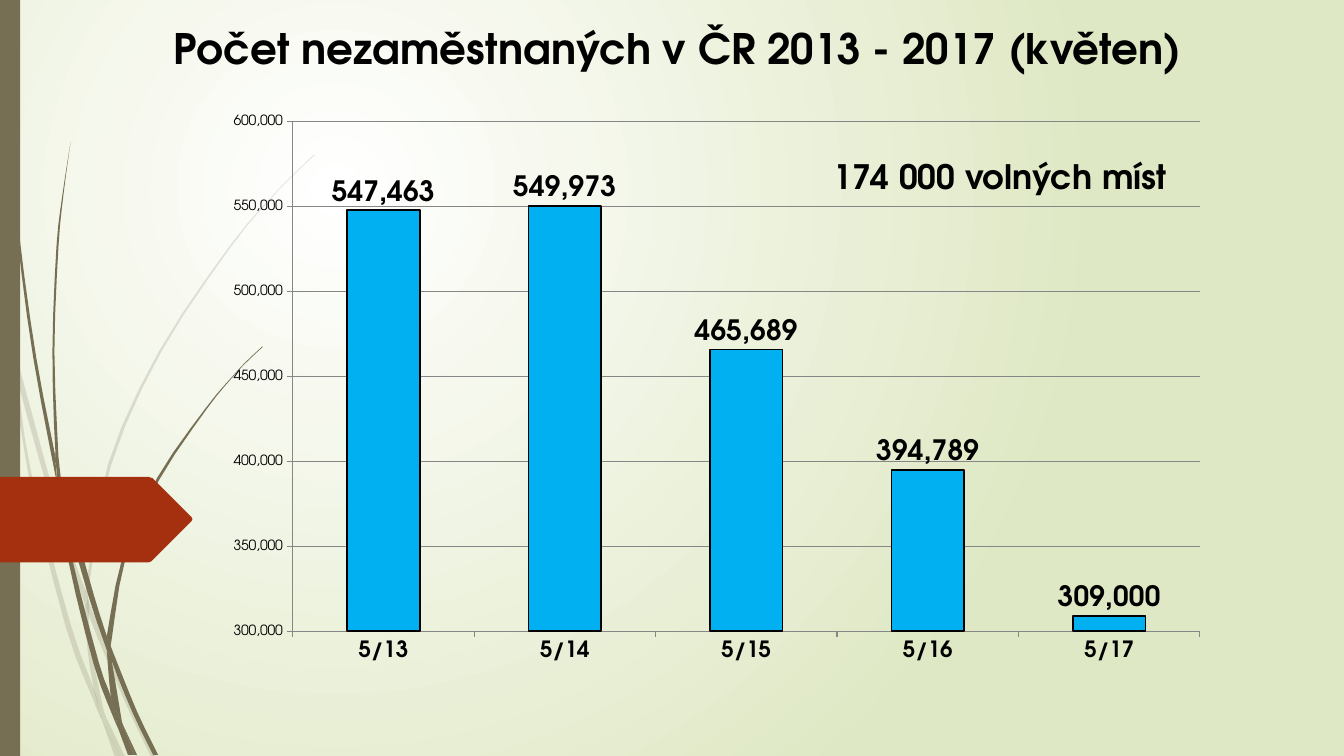
from lxml import etree
from pptx import Presentation
from pptx.chart.data import CategoryChartData
from pptx.dml.color import RGBColor
from pptx.enum.chart import XL_CHART_TYPE, XL_LABEL_POSITION, XL_TICK_MARK
from pptx.enum.shapes import MSO_SHAPE
from pptx.oxml.ns import qn
from pptx.util import Cm, Pt

FONT = "TeX Gyre Adventor"
COLORS = {"text": "000000", "bar": "00B0F0", "grid": "868686", "stem": "766F54",
          "arrow": "A53010", "glow": "FFFFFF", "meadow": "DFE8C4"}

TITLE = "Počet nezaměstnaných v ČR 2013 - 2017 (květen)"
VACANCIES = "174 000 volných míst"
UNEMPLOYED = {"5/13": 547463, "5/14": 549973, "5/15": 465689, "5/16": 394789, "5/17": 309000}
PLOT_AREA = {"x": 0.079, "y": 0.03, "w": 0.901, "h": 0.894}

# Outlines are in steps of 0.0254 cm; each piece of grass has one edge and then the edge back
OUTLINE_STEP = 0.0254
PALE_GRASS = [
    ([(11, 350), (9, 322), (0, 282)], [(0, 299), (10, 344), (11, 350)]),
    ([(14, 345), (17, 376), (58, 522), (84, 599)], [(85, 586), (62, 520), (14, 345)]),
    ([(88, 596), (88, 610), (123, 694), (150, 751)],
     [(155, 751), (127, 692), (92, 607), (88, 596)]),
    ([(105, 711), (119, 751)], [(124, 751), (105, 711)]),
    ([(11, 350), (28, 470), (65, 621), (92, 693), (101, 714)],
     [(99, 707), (93, 683), (70, 619), (31, 469), (17, 376), (11, 350)]),
    ([(84, 599), (87, 646), (93, 683), (96, 692), (105, 711)],
     [(103, 706), (91, 646), (88, 610), (88, 608), (84, 599)]),
    ([(312, 153), (289, 175), (268, 197), (228, 244), (158, 348), (107, 461), (85, 584),
      (85, 586)],
     [(88, 596), (88, 584), (110, 462), (160, 349), (229, 245), (268, 198), (290, 175),
      (312, 154)]),
    ([(101, 714), (114, 751)], [(119, 751), (101, 714)]),
    ([(85, 586), (84, 599)], [(88, 608), (88, 610), (88, 596), (85, 586)]),
    ([(93, 683), (99, 707), (101, 714), (119, 751)], [(105, 711), (96, 692), (93, 683)]),
]
DARK_GRASS = [
    ([(3, 0), (4, 48), (7, 110), (17, 233), (33, 355), (56, 477), (57, 481)],
     [(55, 457), (55, 453), (36, 355), (19, 232), (8, 109), (5, 48), (4, 0)]),
    ([(60, 472), (64, 505), (88, 592), (106, 645)],
     [(106, 633), (106, 631), (93, 590), (60, 472)]),
    ([(110, 641), (111, 656), (132, 708), (152, 749)],
     [(157, 749), (136, 706), (113, 649), (110, 641)]),
    ([(57, 477), (68, 557), (93, 659), (111, 708), (117, 722)],
     [(116, 717), (110, 691), (98, 657), (72, 556), (64, 505), (57, 477)]),
    ([(70, 141), (62, 193), (56, 245), (52, 349), (55, 449), (60, 472)],
     [(58, 453), (54, 349), (58, 245), (63, 193), (70, 141)]),
    ([(122, 719), (133, 749)], [(136, 749), (122, 719)]),
    ([(55, 449), (55, 453), (57, 477)], [(64, 505), (60, 472), (55, 449)]),
    ([(261, 344), (245, 359), (231, 374), (205, 406), (158, 476), (125, 552), (111, 633),
      (110, 641)],
     [(106, 631), (122, 551), (156, 474), (204, 405), (231, 373), (245, 358), (260, 344)]),
    ([(117, 722), (127, 749)], [(131, 749), (117, 722)]),
    ([(106, 645), (110, 691), (116, 706), (122, 719)],
     [(121, 716), (111, 656), (109, 651), (106, 645)]),
    ([(106, 631), (106, 645)], [(109, 651), (111, 656), (110, 641), (106, 631)]),
    ([(110, 691), (116, 717), (117, 722), (130, 749)],
     [(133, 749), (122, 719), (116, 706), (110, 691)]),
]
ARROW = [(0, 473), (147, 473), (150, 474), (151, 474), (190, 513), (191, 515), (190, 517),
         (151, 556), (150, 557), (147, 558), (0, 558)]


def rgb(name):
    return RGBColor.from_string(COLORS[name])


def style_font(font, size, bold=False):
    font.name, font.size, font.bold = FONT, Pt(size), bold
    font.color.rgb = rgb("text")


def paint(shape, color, alpha=None):
    shape.shadow.inherit = False
    shape.fill.solid()
    shape.fill.fore_color.rgb = rgb(color)
    shape.line.fill.background()
    if alpha:
        swatch = shape.element.spPr.find(f"{qn('a:solidFill')}/{qn('a:srgbClr')}")
        etree.SubElement(swatch, qn("a:alpha"), val=str(alpha * 1000))


def smooth(points, steps=3):
    """Catmull-Rom curve through the points, as a list of points."""
    if len(points) == 2:
        return points
    padded = [points[0], *points, points[-1]]
    curve = []
    for a, b, c, d in zip(padded, padded[1:], padded[2:], padded[3:]):
        for step in range(steps):
            t = step / steps
            curve.append(tuple(
                q + t * (r - p) / 2 + t**2 * (2 * p - 5 * q + 4 * r - s) / 2
                + t**3 * (3 * q - p - 3 * r + s) / 2
                for p, q, r, s in zip(a, b, c, d)))
    return curve + [points[-1]]


def add_outline(shapes, points, color, alpha=None):
    corners = [(Cm(x * OUTLINE_STEP), Cm(y * OUTLINE_STEP)) for x, y in points]
    builder = shapes.build_freeform(*corners[0])
    builder.add_line_segments(corners[1:], close=True)
    paint(builder.convert_to_shape(), color, alpha)


def add_text(shapes, text, size, box, wrap):
    frame = shapes.add_textbox(*map(Cm, box)).text_frame
    frame.word_wrap = wrap
    frame.text = text
    style_font(frame.paragraphs[0].runs[0].font, size, bold=True)


def set_background(slide):
    fill = slide.background.fill
    fill.gradient()
    for stop, position, color in zip(fill.gradient_stops, (0, 1), ("glow", "meadow")):
        stop.position = position
        stop.color.rgb = rgb(color)
    gradient = slide.element.find(f".//{qn('a:gradFill')}")
    circle = etree.Element(qn("a:path"), {"path": "circle"})
    etree.SubElement(circle, qn("a:fillToRect"), l="50000", t="50000", r="100000", b="100000")
    gradient.replace(gradient.find(qn("a:lin")), circle)


def fix_plot_area(chart):
    plot_area = chart._chartSpace.find(f".//{qn('c:plotArea')}")
    for old in plot_area.findall(qn("c:layout")):
        plot_area.remove(old)
    layout = etree.Element(qn("c:layout"))
    manual = etree.SubElement(layout, qn("c:manualLayout"))
    settings = {"layoutTarget": "inner", "xMode": "edge", "yMode": "edge", **PLOT_AREA}
    for tag, value in settings.items():
        etree.SubElement(manual, qn(f"c:{tag}"), val=str(value))
    plot_area.insert(0, layout)


def add_unemployment_chart(shapes):
    data = CategoryChartData(number_format="#,##0")
    data.categories = list(UNEMPLOYED)
    data.add_series("Series 1", list(UNEMPLOYED.values()))
    chart = shapes.add_chart(XL_CHART_TYPE.COLUMN_CLUSTERED, Cm(5.37), Cm(2.62),
                             Cm(25.38), Cm(14.38), data).chart
    chart.has_legend = chart.has_title = False
    style_font(chart.font, 10)
    fix_plot_area(chart)

    months, people = chart.category_axis, chart.value_axis
    people.minimum_scale, people.maximum_scale, people.major_unit = 300000, 600000, 50000
    people.has_major_gridlines = True
    people.tick_labels.number_format = "#,##0"
    people.tick_labels.number_format_is_linked = False
    for axis, size, bold in ((months, 16, True), (people, 10, False)):
        axis.major_tick_mark = XL_TICK_MARK.OUTSIDE
        style_font(axis.tick_labels.font, size, bold)
    for line in (months.format.line, people.format.line, people.major_gridlines.format.line):
        line.color.rgb = rgb("grid")
        line.width = Pt(0.75)

    plot = chart.plots[0]
    plot.gap_width = 150
    plot.vary_by_categories = False
    bars = plot.series[0]
    bars.format.fill.solid()
    bars.format.fill.fore_color.rgb = rgb("bar")
    bars.format.line.color.rgb = rgb("text")
    bars.format.line.width = Pt(1.25)
    labels = bars.data_labels
    labels.show_value = True
    labels.number_format = "#,##0"
    labels.number_format_is_linked = False
    labels.position = XL_LABEL_POSITION.OUTSIDE_END
    style_font(labels.font, 20, bold=True)


def main():
    deck = Presentation()
    deck.slide_width, deck.slide_height = Cm(33.87), Cm(19.05)
    slide = deck.slides.add_slide(deck.slide_layouts[6])
    shapes = slide.shapes
    set_background(slide)

    for grass, alpha in ((PALE_GRASS, 20), (DARK_GRASS, None)):
        for edge, edge_back in grass:
            add_outline(shapes, smooth(edge) + smooth(edge_back), "stem", alpha)
    paint(shapes.add_shape(MSO_SHAPE.RECTANGLE, 0, 0, Cm(0.51), deck.slide_height), "stem")
    add_outline(shapes, ARROW, "arrow")

    add_text(shapes, TITLE, 30, (4.13, 0.45, 26.77, 1.83), wrap=True)
    add_unemployment_chart(shapes)
    add_text(shapes, VACANCIES, 24, (20.75, 3.81, 9.07, 1.27), wrap=False)
    deck.save("out.pptx")


if __name__ == "__main__":
    main()
